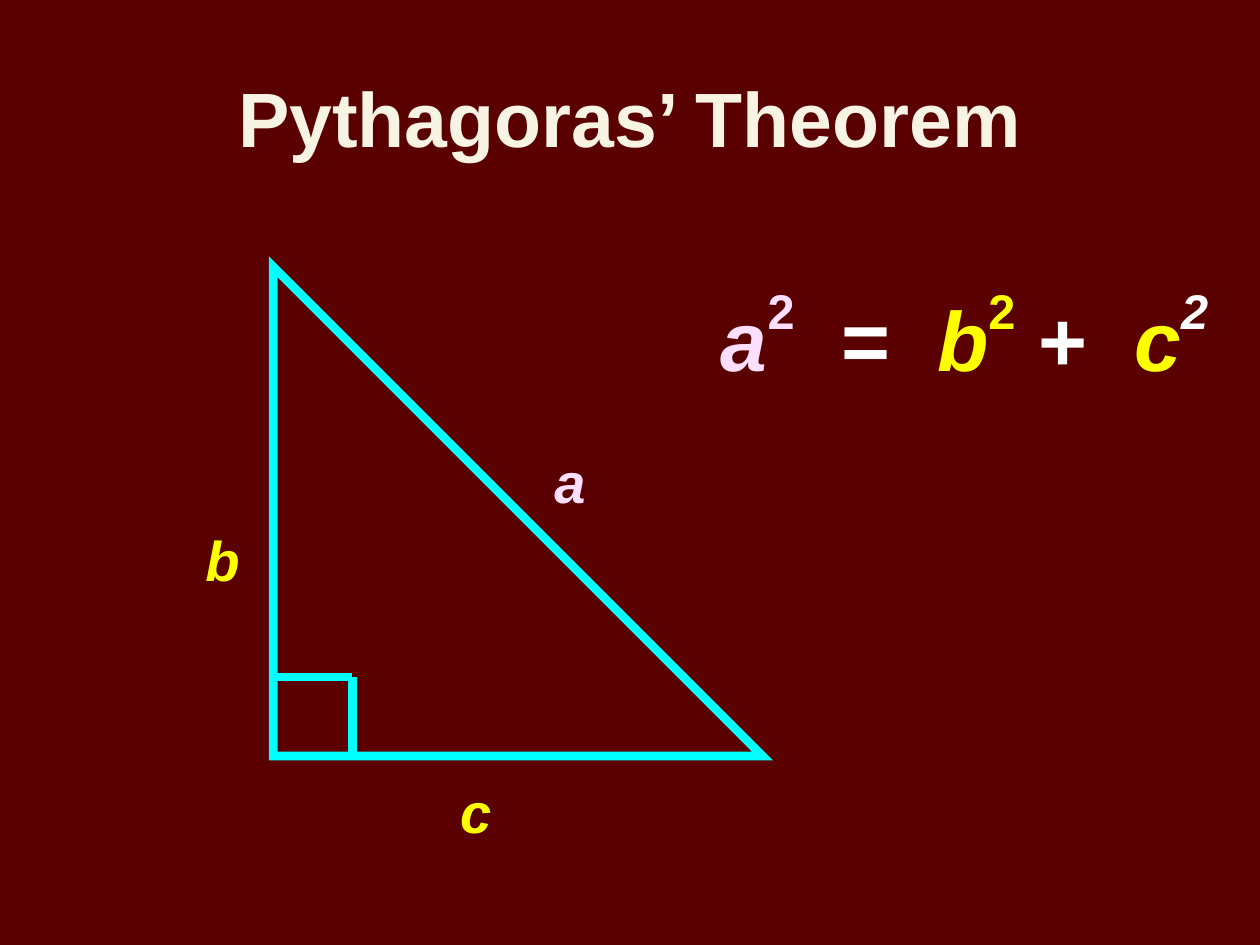
from lxml import etree
from pptx import Presentation
from pptx.dml.color import RGBColor
from pptx.enum.shapes import MSO_CONNECTOR, MSO_SHAPE
from pptx.enum.text import MSO_ANCHOR, MSO_AUTO_SIZE, PP_ALIGN
from pptx.oxml.ns import qn
from pptx.util import Cm, Pt

MAROON = RGBColor(0x5A, 0x00, 0x00)
CREAM = RGBColor(0xF7, 0xF4, 0xE3)
CYAN = RGBColor(0x00, 0xFF, 0xFF)
YELLOW = RGBColor(0xFF, 0xFF, 0x00)
PINK = RGBColor(0xFF, 0xDF, 0xFF)
WHITE = RGBColor(0xFF, 0xFF, 0xFF)

RIGHT = MSO_SHAPE.RIGHT_TRIANGLE
LINE = MSO_CONNECTOR.STRAIGHT
CENTER = PP_ALIGN.CENTER
MIDDLE = MSO_ANCHOR.MIDDLE
GROW = MSO_AUTO_SIZE.SHAPE_TO_FIT_TEXT
TITLE_ONLY = 5


class Board:
    """Holds the slide and the style of its text and lines."""

    def __init__(self, slide):
        self.slide = slide
        self.base = {"name": "Arial", "bold": True}
        slide.background.fill.solid()
        slide.background.fill.fore_color.rgb = MAROON

    def add_run(self, para, text, color, raised=False, **form):
        run = para.add_run()
        run.text = text
        for key, value in {**self.base, **form}.items():
            setattr(run.font, key, value)
        run.font.color.rgb = color
        if raised:
            run._r.get_or_add_rPr().set("baseline", "50000")

    def title(self, text, box):
        shape = self.slide.shapes.title
        for key, value in zip(("left", "top", "width", "height"), box):
            setattr(shape, key, Cm(value))
        frame = shape.text_frame
        frame.vertical_anchor = MIDDLE
        para = frame.paragraphs[0]
        para.alignment = CENTER
        self.add_run(para, text, CREAM, size=Pt(44))

    def text(self, box, parts, size, wrap=False):
        frame = self.slide.shapes.add_textbox(*map(Cm, box)).text_frame
        frame.word_wrap = wrap
        frame.auto_size = GROW
        para = frame.paragraphs[0]
        para.alignment = CENTER
        for text, color, italic, raised in parts:
            self.add_run(para, text, color, raised, size=Pt(size), italic=italic)

    def stroke(self, shape):
        shape.line.color.rgb = CYAN
        shape.line.width = Pt(5)
        edge = shape.element.spPr.find(qn("a:ln"))
        etree.SubElement(edge, qn("a:miter"), lim="800000")

    def shape(self, kind, box):
        shape = self.slide.shapes.add_shape(kind, *map(Cm, box))
        shape.shadow.inherit = False
        shape.fill.background()
        self.stroke(shape)

    def line(self, start, end):
        line = self.slide.shapes.add_connector(LINE, *map(Cm, start + end))
        self.stroke(line)
        etree.SubElement(line.element.spPr, qn("a:effectLst"))


def main():
    deck = Presentation()
    deck.slide_width, deck.slide_height = Cm(25.4), Cm(19.05)
    layout = deck.slide_layouts[TITLE_ONLY]
    board = Board(deck.slides.add_slide(layout))

    board.title("Pythagoras’ Theorem", (1.27, 0.76, 22.86, 3.18))

    left, base, side, notch = 5.51, 15.24, 9.86, 1.59
    board.shape(RIGHT, (left, base - side, side, side))

    for name, color, x, y, width in (
        ("b", YELLOW, 3.89, 10.46, 1.19),
        ("c", YELLOW, 9.02, 15.54, 1.14),
        ("a", PINK, 10.92, 8.89, 1.14),
    ):
        board.text((x, y, width, 1.6), [(name, color, True, False)], 32)

    corner = (left + notch, base - notch)
    board.line((left, base - notch), corner)
    board.line(corner, (left + notch, base))

    formula = [
        ("a", PINK, True, False),
        ("2", PINK, False, True),
        ("  =  ", WHITE, False, False),
        ("b", YELLOW, True, False),
        ("2", YELLOW, False, True),
        (" +  ", WHITE, False, False),
        ("c", YELLOW, True, False),
        ("2", WHITE, True, True),
    ]
    board.text((13.49, 5.54, 11.91, 2.29), formula, 48, wrap=True)

    deck.save("out.pptx")


if __name__ == "__main__":
    main()
